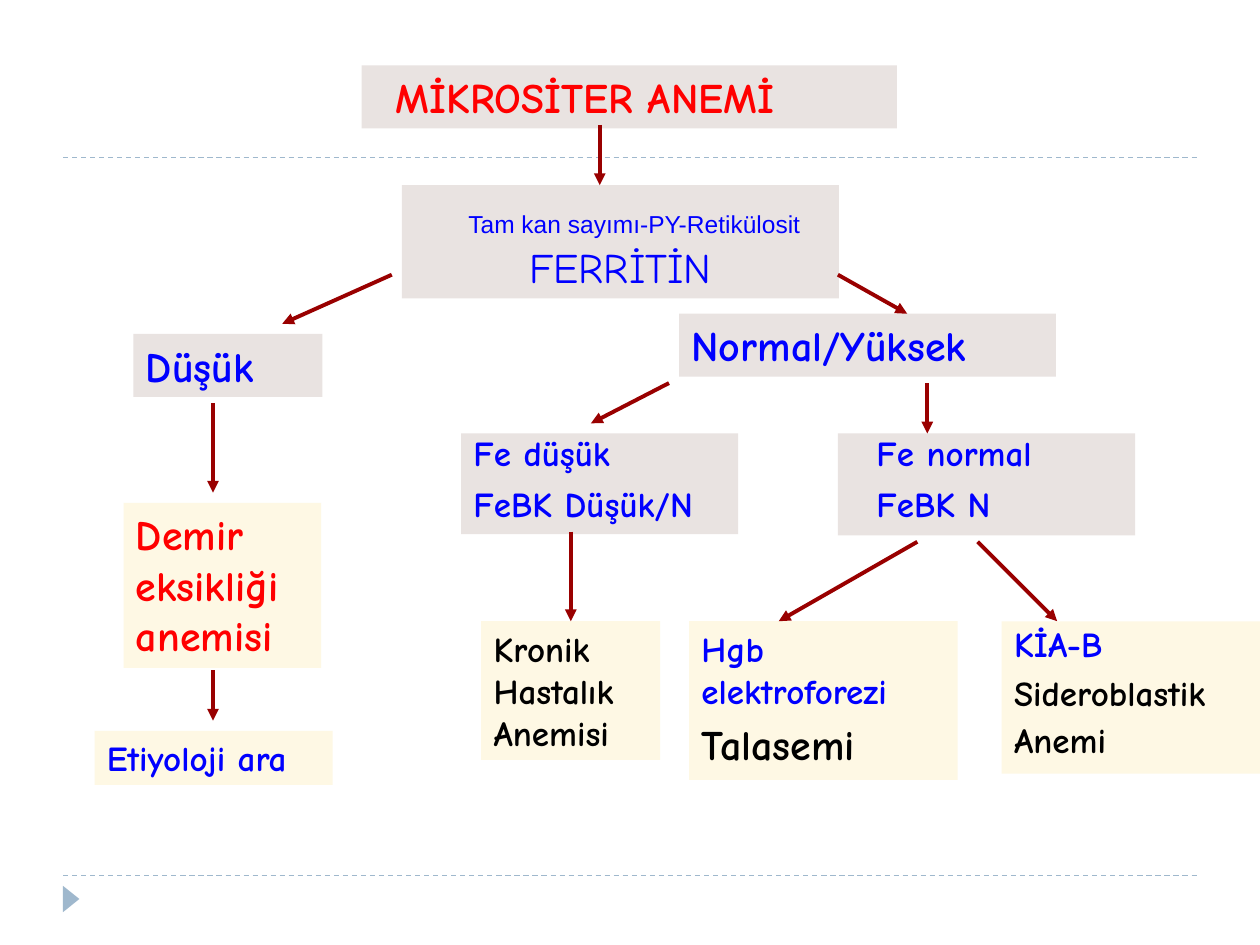
from lxml.etree import SubElement
from pptx import Presentation
from pptx.dml.color import RGBColor
from pptx.enum.dml import MSO_LINE
from pptx.enum.shapes import MSO_CONNECTOR, MSO_SHAPE
from pptx.enum.text import MSO_ANCHOR, PP_ALIGN
from pptx.oxml.ns import qn
from pptx.util import Pt

COLORS = {
    "gray": "E9E3E1", "cream": "FEF8E4", "red": "FF0000", "blue": "0000FF",
    "black": "000000", "arrow": "990000", "rule": "9FB8CD",
}
FONT = "Comic Neue"

# (left, top, width, height), fill, left indent, [(text, size, colour, line spacing)]
BOXES = [
    ((206.6, 37.4, 306, 36), "gray", 12.5, [("MİKROSİTER ANEMİ", 24, "red", 1)]),
    ((76.3, 190.8, 108, 36), "gray", 0, [("Düşük", 24, "blue", 1)]),
    ((388.1, 179.3, 215.3, 36), "gray", 0, [("Normal/Yüksek", 24, "blue", 1)]),
    ((70.6, 287.3, 113, 94.3), "cream", 0, [("Demir eksikliği anemisi", 24, "red", 1)]),
    ((54, 417.6, 136.1, 31), "cream", 0, [("Etiyoloji ara", 20, "blue", 1)]),
    ((263.5, 247.7, 158.4, 57.6), "gray", 0,
     [("Fe düşük", 20, "blue", 0.8), ("FeBK Düşük/N", 20, "blue", 0.8)]),
    ((478.8, 247.7, 169.9, 58.3), "gray", 15,
     [("Fe normal", 20, "blue", 0.8), ("FeBK N", 20, "blue", 0.8)]),
    ((275, 355, 102.2, 79.2), "cream", 0, [("Kronik Hastalık Anemisi", 20, "black", 1)]),
    ((393.8, 355, 153.4, 90.7), "cream", 0,
     [("Hgb elektroforezi", 20, "blue", 1), ("Talasemi", 24, "black", 0.7)]),
    ((572.4, 355, 147.6, 87.1), "cream", 0,
     [("KİA-B", 20, "blue", 0.9), ("Sideroblastik", 20, "black", 0.7),
      ("Anemi", 20, "black", 0.7)]),
]
FERRITIN_AREA = (229.7, 105.8, 249.8, 64.8)
FERRITIN_LINES = [("Tam kan sayımı-PY-Retikülosit", 14, "Arial", 16, 0),
                  ("FERRİTİN", 24, FONT, 0, 2)]
ARROWS = [
    (342.7, 71.3, 342.7, 105.8),
    (223.9, 157, 161.3, 185),
    (478.8, 157, 518.4, 179.3),
    (121.7, 230.4, 121.7, 281.5),
    (121.7, 383, 121.7, 411.8),
    (382.3, 218.9, 337.7, 241.9),
    (529.9, 218.9, 529.9, 247.7),
    (326.2, 303.8, 326.2, 355),
    (524.2, 309.6, 445, 355),
    (558.7, 309.6, 604.1, 355),
]
RULE_TOPS = [500.4, 90]


def color(name):
    return RGBColor.from_string(COLORS[name])


def add_line(slide, ends, name, width):
    line = slide.shapes.add_connector(MSO_CONNECTOR.STRAIGHT, *map(Pt, ends))
    line.line.color.rgb = color(name)
    line.line.width = Pt(width)
    SubElement(line._element.spPr, qn("a:effectLst"))
    return line


def add_shape(slide, kind, area, fill):
    shape = slide.shapes.add_shape(kind, *map(Pt, area))
    shape.shadow.inherit = False
    shape.fill.solid()
    shape.fill.fore_color.rgb = color(fill)
    shape.line.fill.background()
    return shape


def add_box(slide, area, fill, anchor=MSO_ANCHOR.TOP):
    frame = add_shape(slide, MSO_SHAPE.RECTANGLE, area, fill).text_frame
    frame.word_wrap = True
    frame.vertical_anchor = anchor
    return frame


def add_para(frame, index, text, size, name, font=FONT, bold=True):
    para = frame.add_paragraph() if index else frame.paragraphs[0]
    para.text = text
    para.alignment = PP_ALIGN.LEFT
    para.font.size = Pt(size)
    para.font.name = font
    para.font.bold = bold
    para.font.color.rgb = color(name)
    return para


def indent(para, amount):
    if amount:
        para._p.get_or_add_pPr().set("marL", str(int(Pt(amount))))


deck = Presentation()
deck.slide_width, deck.slide_height = Pt(720), Pt(540)
slide = deck.slides.add_slide(deck.slide_layouts[6])

for top in RULE_TOPS:
    rule = add_line(slide, (36, top, 684, top), "rule", 0.75)
    rule.line.dash_style = MSO_LINE.DASH
marker = add_shape(slide, MSO_SHAPE.ISOSCELES_TRIANGLE, (33.1, 509, 15.1, 9.4), "rule")
marker.rotation = 90

for area, fill, margin, lines in BOXES:
    frame = add_box(slide, area, fill)
    for index, (text, size, name, spacing) in enumerate(lines):
        para = add_para(frame, index, text, size, name)
        para.line_spacing = spacing
        indent(para, margin)
        if index:
            para.space_before = Pt(size / 2)

frame = add_box(slide, FERRITIN_AREA, "gray", MSO_ANCHOR.BOTTOM)
for index, (text, size, font, margin, gap) in enumerate(FERRITIN_LINES):
    para = add_para(frame, index, text, size, "blue", font, False)
    para.alignment = PP_ALIGN.CENTER
    para.space_before = Pt(gap)
    indent(para, margin)

for ends in ARROWS:
    arrow = add_line(slide, ends, "arrow", 2.25)
    SubElement(arrow.line._get_or_add_ln(), qn("a:tailEnd"), type="triangle")

deck.save("out.pptx")
